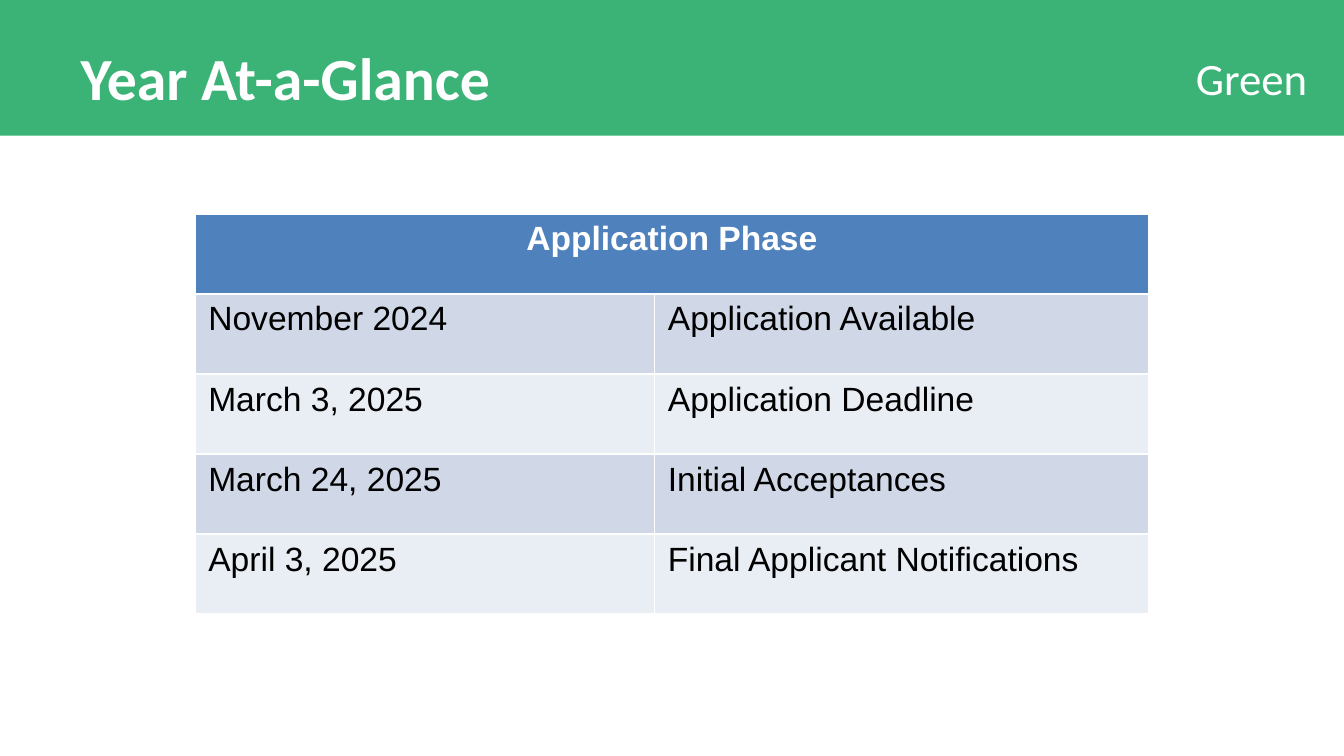
"""Build the Year At-a-Glance slide with its application phase table."""
from dataclasses import dataclass

from pptx import Presentation
from pptx.dml.color import RGBColor
from pptx.enum import shapes, text
from pptx.util import Pt

GREEN = RGBColor(0x3B, 0xB3, 0x77)
BLUE = RGBColor(0x4F, 0x81, 0xBD)
DARK_BAND = RGBColor(0xD0, 0xD8, 0xE8)
LIGHT_BAND = RGBColor(0xE9, 0xED, 0xF4)
WHITE = RGBColor(0xFF, 0xFF, 0xFF)
BLACK = RGBColor(0x00, 0x00, 0x00)

COLUMN_WIDTHS = (246.2, 265)
ROW_HEIGHT = 42.9


@dataclass(frozen=True)
class TextStyle:
    font: str
    size: float
    color: RGBColor
    bold: bool = False
    alignment: text.PP_ALIGN = text.PP_ALIGN.LEFT


@dataclass(frozen=True)
class Milestone:
    date: str
    event: str


TITLE_STYLE = TextStyle("Calibri", 32, WHITE, bold=True)
LABEL_STYLE = TextStyle("Calibri", 24, WHITE)
HEADER_STYLE = TextStyle("Arial", 18, WHITE, True, text.PP_ALIGN.CENTER)
BODY_STYLE = TextStyle("Arial", 18, BLACK)

MILESTONES = (
    Milestone("November 2024", "Application Available"),
    Milestone("March 3, 2025", "Application Deadline"),
    Milestone("March 24, 2025", "Initial Acceptances"),
    Milestone("April 3, 2025", "Final Applicant Notifications"),
)


def write_text(text_frame, content: str, style: TextStyle) -> None:
    text_frame.text = content
    paragraph = text_frame.paragraphs[0]
    paragraph.alignment = style.alignment
    for run in paragraph.runs:
        run.font.name = style.font
        run.font.size = Pt(style.size)
        run.font.bold = style.bold
        run.font.color.rgb = style.color


def fill_cell(cell, content: str, color: RGBColor, style: TextStyle) -> None:
    cell.fill.solid()
    cell.fill.fore_color.rgb = color
    write_text(cell.text_frame, content, style)


def add_heading(slide) -> None:
    banner = slide.shapes.add_shape(
        shapes.MSO_SHAPE.RECTANGLE, Pt(0), Pt(0), Pt(720), Pt(72.7))
    banner.shadow.inherit = False
    banner.fill.solid()
    banner.fill.fore_color.rgb = GREEN
    banner.line.fill.background()

    label = slide.shapes.add_textbox(Pt(633.6), Pt(23.8), Pt(75), Pt(36))
    label.text_frame.word_wrap = True
    label.text_frame.auto_size = text.MSO_AUTO_SIZE.SHAPE_TO_FIT_TEXT
    write_text(label.text_frame, "Green", LABEL_STYLE)

    title = slide.shapes.title
    title.left, title.top, title.width, title.height = Pt(36), Pt(18), Pt(648), Pt(59)
    title.text_frame.vertical_anchor = text.MSO_ANCHOR.TOP
    title.text_frame.auto_size = text.MSO_AUTO_SIZE.NONE
    write_text(title.text_frame, "Year At-a-Glance", TITLE_STYLE)
    label.element.addnext(title.element)


def add_schedule(slide) -> None:
    row_count = len(MILESTONES) + 1
    table = slide.shapes.add_table(
        row_count, len(COLUMN_WIDTHS), Pt(104.4), Pt(114.5),
        Pt(sum(COLUMN_WIDTHS)), Pt(row_count * ROW_HEIGHT)).table
    for column, width in zip(table.columns, COLUMN_WIDTHS):
        column.width = Pt(width)
    for row in table.rows:
        row.height = Pt(ROW_HEIGHT)

    header = table.cell(0, 0)
    header.merge(table.cell(0, 1))
    fill_cell(header, "Application Phase", BLUE, HEADER_STYLE)
    for index, milestone in enumerate(MILESTONES, start=1):
        band = DARK_BAND if index % 2 else LIGHT_BAND
        fill_cell(table.cell(index, 0), milestone.date, band, BODY_STYLE)
        fill_cell(table.cell(index, 1), milestone.event, band, BODY_STYLE)


def main() -> None:
    presentation = Presentation()
    presentation.slide_width, presentation.slide_height = Pt(720), Pt(405)
    slide = presentation.slides.add_slide(presentation.slide_layouts[5])
    add_heading(slide)
    add_schedule(slide)
    presentation.save("out.pptx")


if __name__ == "__main__":
    main()
